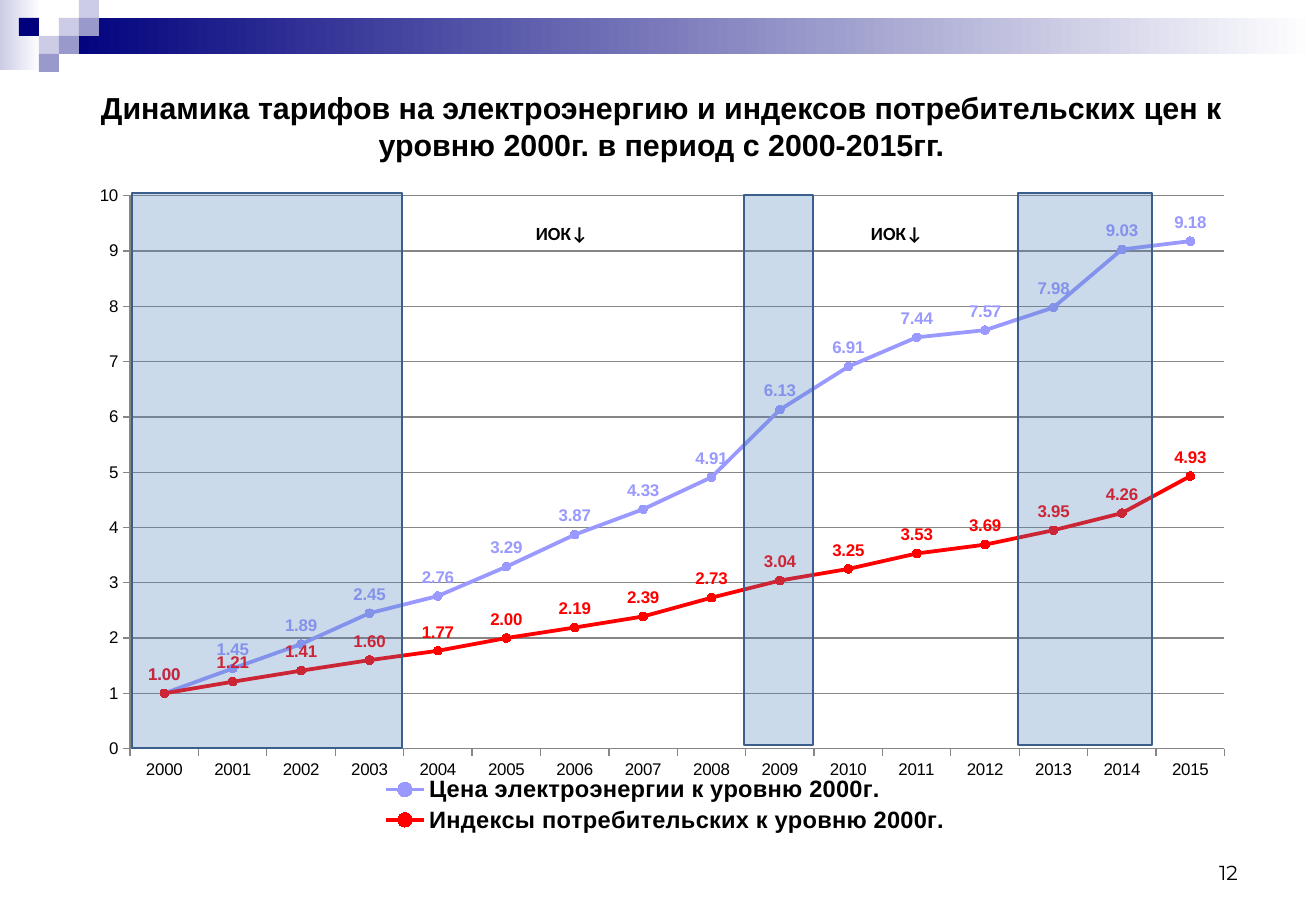
import pptx
import pptx.chart.data
import pptx.dml.color
import pptx.enum.chart
import pptx.enum.shapes
import pptx.enum.text
import pptx.oxml
import pptx.oxml.ns
import pptx.util
from dataclasses import dataclass
from lxml import etree

TITLE = ("Динамика тарифов на электроэнергию и индексов потребительских цен "
         "к уровню 2000г. в период с 2000-2015гг.")
PAGE_NUMBER = "12"
YEARS = [str(year) for year in range(2000, 2016)]
PRICES = [1, 1.45, 1.89, 2.45, 2.76, 3.29, 3.87, 4.33,
          4.91, 6.13, 6.91, 7.44, 7.57, 7.98, 9.03, 9.18]
CONSUMER_INDEX = [1, 1.21, 1.41, 1.6, 1.77, 2, 2.19, 2.39,
                  2.73, 3.04, 3.25, 3.53, 3.69, 3.95, 4.26, 4.93]
IOK = "ИОК↓"
IOK_BOXES = [(524, 216, 128, 55), (859, 216, 128, 55)]
PERIODS = [(132, 193, 270, 555), (1018, 193, 134, 552), (744, 195, 69, 550)]
CHART_BOX = (85, 176, 1157, 663)
PLOT_BOX = (130, 196, 1094, 553)
LEGEND_BOX = (380, 773, 570, 64)


@dataclass(frozen=True)
class Theme:
    navy: str = "00007D"
    pale: str = "CCCCE6"
    lilac: str = "9999CC"
    white: str = "FFFFFF"
    text: str = "000000"
    price: str = "9999FF"
    index: str = "FF0000"
    period: str = "4F81BD"
    period_line: str = "3A5F8C"
    grid: str = "868686"
    font: str = "Arial"
    title_size: int = 18
    legend_size: int = 14
    page_size: int = 12
    note_size: int = 11
    chart_size: int = 10


THEME = Theme()
SERIES = [("Цена электроэнергии к уровню 2000г.", PRICES, THEME.price),
          ("Индексы потребительских к уровню 2000г.", CONSUMER_INDEX, THEME.index)]
CHECKERS = [(3, 1, THEME.pale), (4, 0, THEME.pale), (4, 1, THEME.lilac),
            (2, 2, THEME.pale), (1, 1, THEME.navy), (3, 2, THEME.lilac),
            (2, 3, THEME.lilac)]
CHECKER_WIDTH, CHECKER_HEIGHT = 20, 18
FADES = [((0, 0, 41, 70), THEME.pale, THEME.white),
         ((60, 18, 1256, 36), THEME.navy, THEME.white)]

ALIGN = pptx.enum.text.PP_ALIGN
ANCHOR = pptx.enum.text.MSO_ANCHOR


def px(length):
    return pptx.util.Emu(round(length * 914400 / 121.5))


def box(lengths):
    return [px(length) for length in lengths]


def rgb(color):
    return pptx.dml.color.RGBColor.from_string(color)


def style_font(font, size, color=THEME.text, bold=False, face=THEME.font):
    font.size = pptx.util.Pt(size)
    font.color.rgb = rgb(color)
    font.bold = bold
    font.name = face


def write(holder, text, *, size, face=THEME.font, bold=False,
          align=ALIGN.LEFT, anchor=ANCHOR.TOP):
    frame = holder.text_frame
    frame.word_wrap = True
    frame.auto_size = pptx.enum.text.MSO_AUTO_SIZE.NONE
    frame.vertical_anchor = anchor
    paragraph = frame.paragraphs[0]
    paragraph.alignment = align
    run = paragraph.add_run()
    run.text = text
    style_font(run.font, size, bold=bold, face=face)


def add_rect(slide, lengths):
    rect = slide.shapes.add_shape(pptx.enum.shapes.MSO_SHAPE.RECTANGLE, *box(lengths))
    rect.shadow.inherit = False
    rect.line.fill.background()
    return rect


def add_header(slide):
    for lengths, start, end in FADES:
        fade = add_rect(slide, lengths).fill
        fade.gradient()
        fade.gradient_angle = 0
        for stop, color, position in zip(fade.gradient_stops, (start, end), (0, 1)):
            stop.color.rgb = rgb(color)
            stop.position = position
    for column, row, color in CHECKERS:
        checker = add_rect(slide, (column * CHECKER_WIDTH - 1, row * CHECKER_HEIGHT,
                                   CHECKER_WIDTH, CHECKER_HEIGHT))
        checker.fill.solid()
        checker.fill.fore_color.rgb = rgb(color)


def layout_xml(lengths, inner):
    left, top, width, height = CHART_BOX
    x, y, w, h = lengths
    parts = {"xMode": "edge", "yMode": "edge", "x": round((x - left) / width, 3),
             "y": round((y - top) / height, 3), "w": round(w / width, 3),
             "h": round(h / height, 3)}
    if inner:
        parts = {"layoutTarget": "inner", **parts}
    body = "".join(f'<c:{name} val="{value}"/>' for name, value in parts.items())
    return pptx.oxml.parse_xml(f'<c:layout {pptx.oxml.ns.nsdecls("c")}>'
                               f'<c:manualLayout>{body}</c:manualLayout></c:layout>')


def place(parent, lengths, inner=False):
    for old in parent.findall(pptx.oxml.ns.qn("c:layout")):
        parent.remove(old)
    layout = layout_xml(lengths, inner)
    if inner:
        parent.insert(0, layout)
    else:
        parent.find(pptx.oxml.ns.qn("c:legendPos")).addnext(layout)


def style_series(series, color):
    series.smooth = False
    series.format.line.color.rgb = rgb(color)
    series.format.line.width = pptx.util.Pt(2.25)
    series.marker.style = pptx.enum.chart.XL_MARKER_STYLE.CIRCLE
    series.marker.size = 5
    series.marker.format.fill.solid()
    series.marker.format.fill.fore_color.rgb = rgb(color)
    series.marker.format.line.color.rgb = rgb(color)
    labels = series.data_labels
    labels.show_value = True
    labels.position = pptx.enum.chart.XL_LABEL_POSITION.ABOVE
    labels.number_format = "0.00"
    labels.number_format_is_linked = False
    style_font(labels.font, THEME.chart_size, color, bold=True)


def add_tariff_chart(slide):
    tariffs = pptx.chart.data.CategoryChartData(number_format="0.00")
    tariffs.categories = YEARS
    for name, values, _ in SERIES:
        tariffs.add_series(name, values)
    chart = slide.shapes.add_chart(pptx.enum.chart.XL_CHART_TYPE.LINE_MARKERS,
                                   *box(CHART_BOX), tariffs).chart
    chart.has_title = False
    style_font(chart.font, THEME.chart_size)
    chart.plots[0].vary_by_categories = False
    for series, (_, _, color) in zip(chart.plots[0].series, SERIES):
        style_series(series, color)
    scale = chart.value_axis
    scale.minimum_scale, scale.maximum_scale, scale.major_unit = 0, 10, 1
    scale.tick_labels.number_format = "0"
    scale.tick_labels.number_format_is_linked = False
    scale.has_major_gridlines = True
    for line in (scale.major_gridlines.format.line, scale.format.line,
                 chart.category_axis.format.line):
        line.color.rgb = rgb(THEME.grid)
        line.width = pptx.util.Pt(0.75)
    for axis in (scale, chart.category_axis):
        axis.major_tick_mark = pptx.enum.chart.XL_TICK_MARK.OUTSIDE
        style_font(axis.tick_labels.font, THEME.chart_size)
    chart.has_legend = True
    chart.legend.position = pptx.enum.chart.XL_LEGEND_POSITION.BOTTOM
    chart.legend.include_in_layout = False
    style_font(chart.legend.font, THEME.legend_size, bold=True)
    place(chart.legend._element, LEGEND_BOX)
    place(chart._chartSpace.chart.plotArea, PLOT_BOX, inner=True)


def add_period(slide, lengths):
    period = add_rect(slide, lengths)
    period.fill.solid()
    period.fill.fore_color.rgb = rgb(THEME.period)
    tint = period._element.spPr.find(".//" + pptx.oxml.ns.qn("a:srgbClr"))
    etree.SubElement(tint, pptx.oxml.ns.qn("a:alpha"), val="29000")
    period.line.color.rgb = rgb(THEME.period_line)
    period.line.width = pptx.util.Pt(1)


def main():
    deck = pptx.Presentation()
    deck.slide_width, deck.slide_height = px(1316), px(911)
    slide = deck.slides.add_slide(deck.slide_layouts[5])
    add_header(slide)
    title = slide.shapes.title
    title.left, title.top, title.width, title.height = box((36, 83, 1251, 86))
    write(title, TITLE, size=THEME.title_size, bold=True,
          align=ALIGN.CENTER, anchor=ANCHOR.MIDDLE)
    add_tariff_chart(slide)
    for lengths in PERIODS:
        add_period(slide, lengths)
    for lengths in IOK_BOXES:
        write(slide.shapes.add_textbox(*box(lengths)), IOK,
              size=THEME.note_size, face="Calibri", bold=True)
    write(slide.shapes.add_textbox(*box((943, 830, 307, 61))), PAGE_NUMBER,
          size=THEME.page_size, face="Montserrat", align=ALIGN.RIGHT, anchor=ANCHOR.BOTTOM)
    deck.save("out.pptx")


if __name__ == "__main__":
    main()
